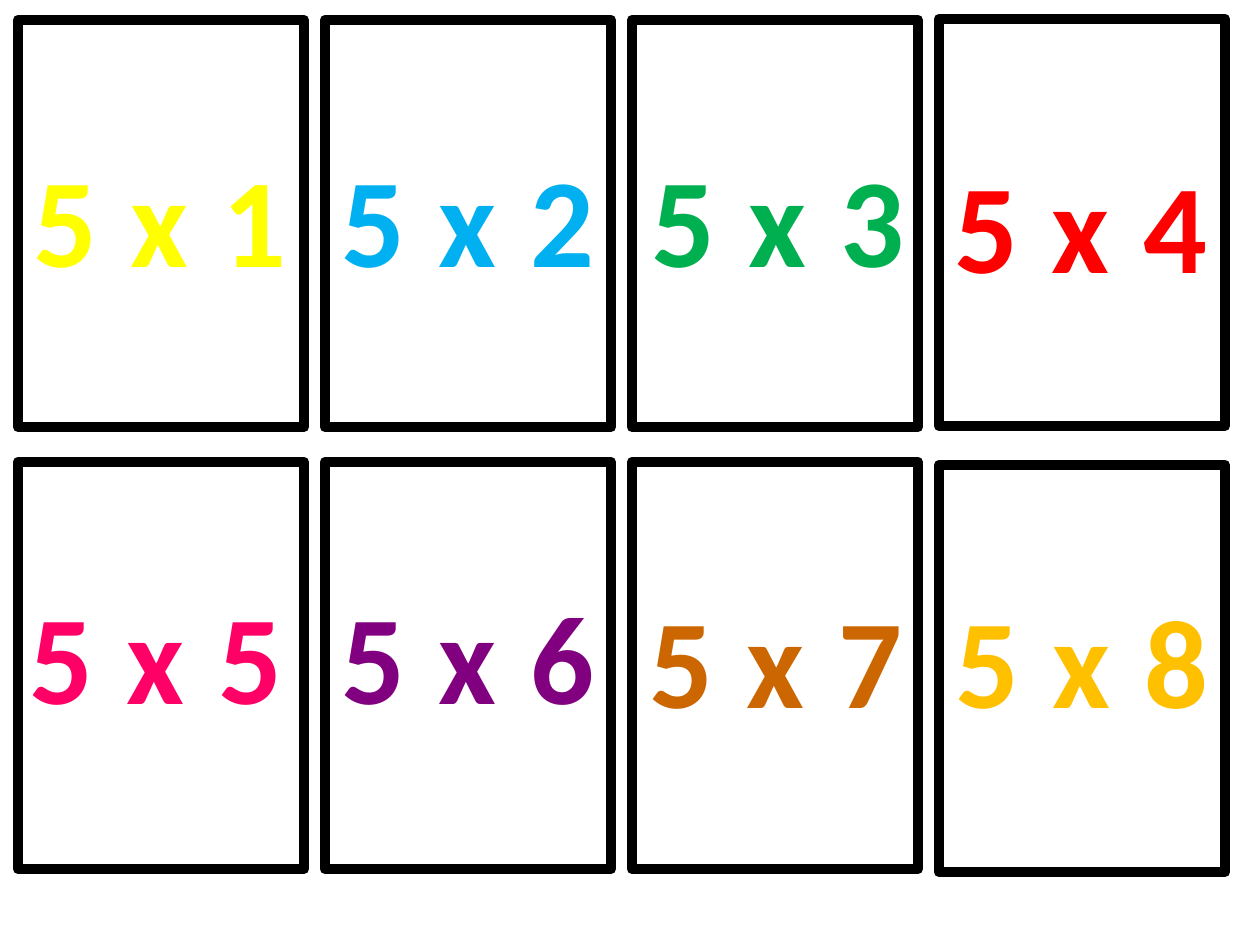
from pptx import Presentation
from pptx.dml.color import RGBColor
from pptx.enum.shapes import MSO_SHAPE
from pptx.enum.text import MSO_AUTO_SIZE, PP_ALIGN
from pptx.util import Emu, Pt

EMU_PER_PX = 914400 / 126

BLACK = RGBColor(0x00, 0x00, 0x00)
WHITE = RGBColor(0xFF, 0xFF, 0xFF)
YELLOW = RGBColor(0xFF, 0xFF, 0x00)
BLUE = RGBColor(0x00, 0xB0, 0xF0)
GREEN = RGBColor(0x00, 0xB0, 0x50)
RED = RGBColor(0xFF, 0x00, 0x00)
PINK = RGBColor(0xFF, 0x00, 0x66)
PURPLE = RGBColor(0x80, 0x00, 0x80)
BROWN = RGBColor(0xCC, 0x66, 0x00)
GOLD = RGBColor(0xFF, 0xC0, 0x00)

COLUMNS = 4
FIRST_LEFT, COLUMN_STEP = 18, 307
CARD_WIDTH, CARD_HEIGHT = 286, 407
SUM_WIDTH, SUM_HEIGHT = 284, 165

# Card top, then left and top of the sum, and its colour
CARDS = [
    (20, 18, 135, YELLOW),
    (20, 326, 135, BLUE),
    (20, 636, 135, GREEN),
    (19, 939, 141, RED),
    (462, 14, 572, PINK),
    (462, 326, 572, PURPLE),
    (462, 634, 576, BROWN),
    (465, 940, 576, GOLD),
]


def px(length):
    return Emu(round(length * EMU_PER_PX))


def add_card(page, left, top):
    card = page.shapes.add_shape(
        MSO_SHAPE.RECTANGLE, px(left), px(top), px(CARD_WIDTH), px(CARD_HEIGHT))
    card.shadow.inherit = False
    card.fill.solid()
    card.fill.fore_color.rgb = WHITE
    card.line.color.rgb = BLACK
    card.line.width = Pt(6)


def add_sum(page, left, top, text, color):
    box = page.shapes.add_textbox(px(left), px(top), px(SUM_WIDTH), px(SUM_HEIGHT))
    frame = box.text_frame
    frame.word_wrap = False
    frame.auto_size = MSO_AUTO_SIZE.SHAPE_TO_FIT_TEXT
    para = frame.paragraphs[0]
    para.alignment = PP_ALIGN.CENTER
    para.font.name = "Calibri"
    para.font.size = Pt(72)
    para.font.bold = True
    para.font.color.rgb = color
    span = para.add_run()
    span.text = text
    # Letter spacing of 1.5 points
    span.font._element.set("spc", "150")


def main():
    deck = Presentation()
    deck.slide_width, deck.slide_height = px(1260), px(945)
    page = deck.slides.add_slide(deck.slide_layouts[6])

    # Two rows of flash cards for the five times table
    for index, (card_top, sum_left, sum_top, color) in enumerate(CARDS):
        add_card(page, FIRST_LEFT + index % COLUMNS * COLUMN_STEP, card_top)
        add_sum(page, sum_left, sum_top, f"5 x {index + 1}", color)

    deck.save("out.pptx")


if __name__ == "__main__":
    main()
